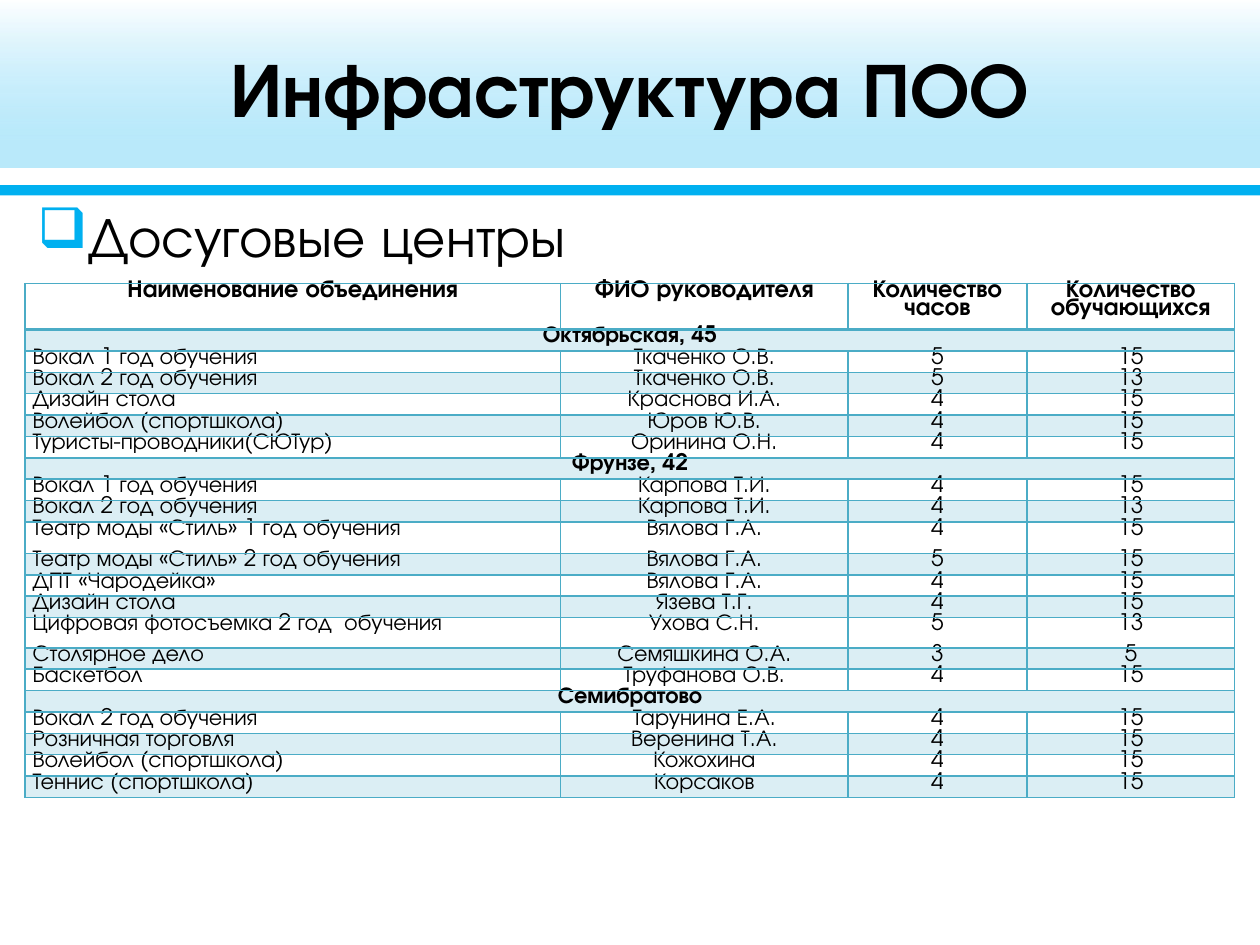
from lxml.etree import SubElement
from pptx import Presentation
from pptx.dml.color import RGBColor
from pptx.enum.shapes import MSO_SHAPE as Shape
from pptx.enum.text import MSO_ANCHOR as Anchor, MSO_AUTO_SIZE as Fit
from pptx.enum.text import PP_ALIGN as Align
from pptx.oxml import parse_xml
from pptx.oxml.ns import nsdecls, qn
from pptx.util import Inches, Pt

FONT = "TeX Gyre Adventor"
BLACK = RGBColor(0x00, 0x00, 0x00)
SKY = RGBColor(0x00, 0xB0, 0xF0)
TEAL = RGBColor(0x4B, 0xAC, 0xC6)
PALE = RGBColor(0xDB, 0xEE, 0xF4)
WHITE = RGBColor(0xFF, 0xFF, 0xFF)

# Content
TITLE = "Инфраструктура ПОО"
TOPIC = "Досуговые центры"
HEAD = ("Наименование объединения", "ФИО руководителя",
        "Количество часов", "Количество обучающихся")
CENTERS = [
    ("Октябрьская, 45", [
        ("Вокал 1 год обучения", "Ткаченко О.В.", 5, 15),
        ("Вокал 2 год обучения", "Ткаченко О.В.", 5, 13),
        ("Дизайн стола", "Краснова И.А.", 4, 15),
        ("Волейбол (спортшкола)", "Юров Ю.В.", 4, 15),
        ("Туристы-проводники(СЮТур)", "Оринина О.Н.", 4, 15),
    ]),
    ("Фрунзе, 42", [
        ("Вокал 1 год обучения", "Карпова Т.И.", 4, 15),
        ("Вокал 2 год обучения", "Карпова Т.И.", 4, 13),
        ("Театр моды «Стиль» 1 год обучения", "Вялова Г.А.", 4, 15),
        ("Театр моды «Стиль» 2 год обучения", "Вялова Г.А.", 5, 15),
        ("ДПТ «Чародейка»", "Вялова Г.А.", 4, 15),
        ("Дизайн стола", "Язева Т.Г.", 4, 15),
        ("Цифровая фотосъемка 2 год  обучения", "Ухова С.Н.", 5, 13),
        ("Столярное дело", "Семяшкина О.А.", 3, 5),
        ("Баскетбол", "Труфанова О.В.", 4, 15),
    ]),
    ("Семибратово", [
        ("Вокал 2 год обучения", "Тарунина Е.А.", 4, 15),
        ("Розничная торговля", "Веренина Т.А.", 4, 15),
        ("Волейбол (спортшкола)", "Кожохина", 4, 15),
        ("Теннис (спортшкола)", "Корсаков", 4, 15),
    ]),
]
COLS = (4.25, 2.28, 1.42, 1.65)
ROW = 0.16
TALL = {0: 0.32, 10: 0.25, 14: 0.24}
LEAD = 0.78  # line spacing in the table


def box(*nums):
    return [Inches(n) for n in nums]


def write(par, text, size, bold=False, align=None):
    par.alignment = align
    run = par.add_run()
    run.text = text
    font = run.font
    font.name, font.size, font.bold = FONT, Pt(size), bold
    font.color.rgb = BLACK


def band(slide, *place):
    shape = slide.shapes.add_shape(Shape.RECTANGLE, *box(*place))
    shape.shadow.inherit = False
    shape.line.fill.background()
    return shape


def edge(cell, side, width):
    line = SubElement(cell._tc.get_or_add_tcPr(), qn("a:ln" + side),
                      w=str(Pt(width)))
    fill = SubElement(line, qn("a:solidFill"))
    SubElement(fill, qn("a:srgbClr"), val=str(TEAL))


def dress(cell, row):
    cell.margin_left = cell.margin_right = Inches(0.06)
    cell.margin_top = cell.margin_bottom = 0
    for side in "LRTB":
        thick = (row, side) in ((0, "B"), (1, "T"))
        edge(cell, side, 2 if thick else 1)
    if row % 2:
        cell.fill.solid()
        cell.fill.fore_color.rgb = PALE
    else:
        cell.fill.background()


def main():
    deck = Presentation()
    deck.slide_width, deck.slide_height = box(10, 7.5)
    slide = deck.slides.add_slide(deck.slide_layouts[5])

    # Header band and rule
    rule = band(slide, 0, 1.47, 10.12, 0.08)
    rule.fill.solid()
    rule.fill.fore_color.rgb = SKY
    head = band(slide, 0, 0, 10.12, 1.33)
    head.fill.gradient()
    grad = head._element.spPr.find(qn("a:gradFill"))
    stops = "".join(
        f'<a:gs pos="{pos}000"><a:srgbClr val="{color}">'
        f'<a:alpha val="{share}000"/></a:srgbClr></a:gs>'
        for pos, color, share in ((0, WHITE, 46), (84, SKY, 27)))
    grad.getparent().replace(grad, parse_xml(
        f'<a:gradFill {nsdecls("a")}><a:gsLst>{stops}</a:gsLst>'
        '<a:lin ang="5400000" scaled="0"/></a:gradFill>'))

    # Title, moved in front of the band
    title = slide.shapes.title
    title.left, title.top, title.width, title.height = box(0.5, 0.06, 9, 1.25)
    title.text_frame.vertical_anchor = Anchor.MIDDLE
    title.text_frame.auto_size = Fit.NONE
    write(title.text_frame.paragraphs[0], TITLE, 44, True, Align.CENTER)
    slide.shapes._spTree.append(title._element)

    # Topic with a square bullet
    topic = slide.shapes.add_textbox(*box(0.2, 1.55, 9.53, 5.46))
    frame = topic.text_frame
    frame.word_wrap = True
    par = frame.paragraphs[0]
    props = par._p.get_or_add_pPr()
    props.set("marL", str(Inches(0.38)))
    props.set("indent", str(Inches(-0.38)))
    color = SubElement(props, qn("a:buClr"))
    SubElement(color, qn("a:srgbClr"), val=str(SKY))
    SubElement(props, qn("a:buFont"), typeface="Wingdings", charset="2")
    SubElement(props, qn("a:buChar"), char="q")
    write(par, TOPIC, 32)

    # Table: a one-item row is a heading across all columns
    rows = [HEAD]
    for name, clubs in CENTERS:
        rows += [(name,), *clubs]
    highs = [TALL.get(i, ROW) for i in range(len(rows))]
    table = slide.shapes.add_table(
        len(rows), len(COLS), *box(0.2, 2.25, sum(COLS), sum(highs))).table
    for col, wide in zip(table.columns, COLS):
        col.width = Inches(wide)
    for i, (row, high) in enumerate(zip(rows, highs)):
        table.rows[i].height = Inches(high)
        for j in range(len(COLS)):
            dress(table.cell(i, j), i)
        group = len(row) == 1
        if group:
            table.cell(i, 0).merge(table.cell(i, len(COLS) - 1))
        for j, text in enumerate(row):
            club = j == 0 and i > 0 and not group
            par = table.cell(i, j).text_frame.paragraphs[0]
            par.line_spacing = LEAD
            write(par, str(text), 13 if i else 14, group or i == 0,
                  Align.JUSTIFY if club else Align.CENTER)

    deck.save("out.pptx")


if __name__ == "__main__":
    main()
